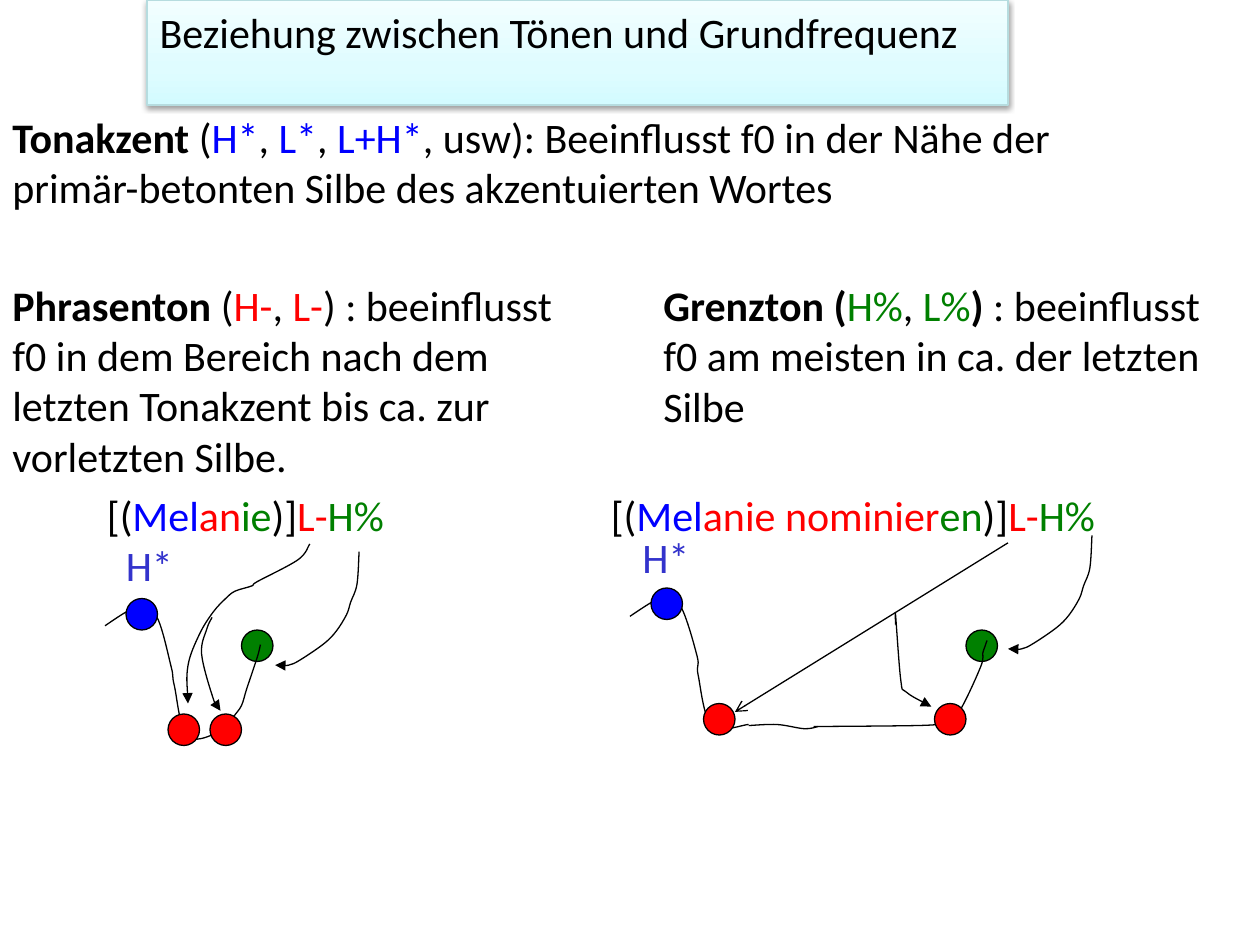
from copy import deepcopy
from lxml.etree import SubElement as Sub
from pptx import Presentation
from pptx.dml.color import RGBColor as RGB
from pptx.enum.shapes import MSO_CONNECTOR as CON, MSO_SHAPE as SHAPE
from pptx.enum.text import MSO_ANCHOR as ANCHOR, MSO_AUTO_SIZE as AUTO, PP_ALIGN as ALIGN
from pptx.oxml.ns import qn
from pptx.util import Inches, Pt

BLACK = RGB(0, 0, 0)
BLUE = RGB(0, 0, 255)
RED = RGB(255, 0, 0)
GREEN = RGB(0, 128, 0)
INDIGO = RGB(0x33, 0x33, 0xCC)
EDGE = RGB(0xB6, 0xDC, 0xDF)
SHADES = [(0, RGB(0xD3, 0xFB, 0xFF)), (0.35, RGB(0xDF, 0xFC, 0xFF)), (1, RGB(0xF2, 0xFE, 0xFF))]
WIDE, HIGH = Inches(10), Inches(7.5)
UNIT = WIDE // 120
DOT = 3
DROP = [(0, 0), (-0.2, 3.1), (-0.8, 4.8), (-1.2, 6), (-2.2, 7.6),
        (-3.4, 8.8), (-5.6, 10.3), (-6.7, 10.8), (-8, 10.8)]


def grid(*vals):
    """Turn columns and rows into lengths."""
    return [round(v * UNIT) for v in vals]


def shift(box, pts):
    """Move points by the corner of a box."""
    return [(box[0] + x, box[1] + y) for x, y in pts]


def write(frame, runs):
    """Fill a text frame with (text, colour, bold) runs."""
    frame.auto_size = AUTO.SHAPE_TO_FIT_TEXT
    para = frame.paragraphs[0]
    para.alignment = ALIGN.LEFT
    for text, tint, *bold in runs:
        run = para.add_run()
        run.text = text
        font = run.font
        font.name, font.size, font.bold = "Calibri", Pt(24), bool(bold)
        font.color.rgb = tint


def label(slide, box, runs, wrap=True):
    """Place a text box."""
    frame = slide.shapes.add_textbox(*grid(*box)).text_frame
    frame.word_wrap = wrap
    write(frame, runs)


def dot(slide, spot, tint):
    """Draw a tone target."""
    oval = slide.shapes.add_shape(SHAPE.OVAL, *grid(*spot, DOT, DOT))
    oval.shadow.inherit = False
    oval.fill.solid()
    oval.fill.fore_color.rgb = tint
    oval.line.color.rgb, oval.line.width = BLACK, Pt(0.75)


def stroke(line, tip=None):
    """Style a line and its arrowhead."""
    line.color.rgb, line.width = BLACK, Pt(0.75)
    if tip:
        Sub(line._get_or_add_ln(), qn("a:tailEnd"), type=tip)


def bend(form):
    """Turn the straight segments of a freeform into smooth cubic ones."""
    props = form._element.spPr
    marks = list(props.iter(qn("a:pt")))
    pts = [(int(m.get("x")), int(m.get("y"))) for m in marks]
    ends = [pts[0], *pts, pts[-1]]
    segs = list(props.iter(qn("a:lnTo")))
    for seg, a, b, c, d in zip(segs, ends, ends[1:], ends[2:], ends[3:]):
        seg.tag = qn("a:cubicBezTo")
        for i, (near, back, fore) in enumerate([(b, a, c), (c, d, b)]):
            pull = deepcopy(seg[-1])
            for key, n, p, f in zip("xy", near, back, fore):
                pull.set(key, str(round(n + (f - p) / 6)))
            seg.insert(i, pull)


def curve(slide, pts, tip=None):
    """Draw an open curve."""
    knots = [tuple(grid(*p)) for p in pts]
    pen = slide.shapes.build_freeform(*knots[0])
    pen.add_line_segments(knots[1:], close=False)
    form = pen.convert_to_shape()
    bend(form)
    form.shadow.inherit = False
    form.fill.background()
    stroke(form.line, tip)


def arrow(slide, start, end):
    """Draw a straight arrow."""
    link = slide.shapes.add_connector(CON.STRAIGHT, *grid(*start, *end))
    Sub(link._element.spPr, qn("a:effectLst"))
    stroke(link.line, "arrow")


def title(slide, box, text):
    """Format the title as a shaded bar."""
    bar = slide.shapes.title
    bar.left, bar.top, bar.width, bar.height = grid(*box)
    bar.fill.gradient()
    bar.fill.gradient_angle = 90
    props = bar._element.spPr
    stops = props.find(".//" + qn("a:gsLst"))
    stops.insert(1, deepcopy(stops[0]))
    for stop, (pos, tint) in zip(bar.fill.gradient_stops, SHADES):
        stop.position, stop.color.rgb = pos, tint
    bar.line.color.rgb, bar.line.width = EDGE, Pt(0.75)
    glow = Sub(Sub(props, qn("a:effectLst")), qn("a:outerShdw"), blurRad=str(Pt(3.1)),
               dist=str(Pt(1.6)), dir="5400000", rotWithShape="0")
    Sub(Sub(glow, qn("a:srgbClr"), val="000000"), qn("a:alpha"), val="38000")
    frame = bar.text_frame
    frame.word_wrap = True
    frame.vertical_anchor = ANCHOR.TOP
    write(frame, [(text, BLACK)])


def tune(slide, box, word, high, peak, lows, last, fall, pitch, curves, ray=None):
    """Draw a phrase with its pitch contour and tone arrows."""
    start, mid, end = word
    label(slide, box, [("[(", BLACK), (start, BLUE), (mid, RED), (end, GREEN),
                       (")]", BLACK), ("L-", RED), ("H%", GREEN)], False)
    dot(slide, *shift(box, [last]), GREEN)
    curve(slide, shift(shift(box, [fall])[0], DROP), "triangle")
    for pts in pitch:
        curve(slide, shift(box, pts))
    dot(slide, *shift(box, [peak]), BLUE)
    label(slide, (*shift(box, [high])[0], 7, 6.1), [("H*", INDIGO)], False)
    for spot in shift(box, lows):
        dot(slide, spot, RED)
    for pts in curves:
        curve(slide, shift(box, pts), "triangle")
    if ray:
        arrow(slide, *shift(box, ray))


def main():
    """Build the slide."""
    deck = Presentation()
    deck.slide_width, deck.slide_height = WIDE, HIGH
    slide = deck.slides.add_slide(deck.slide_layouts[5])
    title(slide, (14, 0, 82, 6.06), "Beziehung zwischen Tönen und Grundfrequenz")
    label(slide, (0, 10, 103, 10.9), [
        ("Tonakzent ", BLACK, True), ("(", BLACK), ("H*", BLUE), (", ", BLACK), ("L*", BLUE),
        (", ", BLACK), ("L+H*", BLUE),
        (", usw): Beeinflusst f0 in der Nähe der primär-betonten Silbe des akzentuierten Wortes", BLACK)])
    label(slide, (62, 26, 55, 15.7), [
        ("Grenzton (", BLACK, True), ("H%", GREEN), (", ", BLACK), ("L%", GREEN), (")", BLACK, True),
        (" : beeinflusst f0 am meisten in ca. der letzten Silbe", BLACK)])
    label(slide, (0, 26, 54, 20.6), [
        ("Phrasenton ", BLACK, True), ("(", BLACK), ("H-", RED), (", ", BLACK), ("L-", RED),
        (") : beeinflusst f0 in dem Bereich nach dem letzten Tonakzent bis ca. zur vorletzten Silbe.", BLACK)])
    tune(slide, (9, 46, 29.6, 6.1), ("Mel", "an", "ie"), high=(1.8, 4.75), peak=(3, 11),
         lows=[(7, 22), (11, 22)], last=(14, 14), fall=(25.2, 6.55),
         pitch=[[(1, 13.6), (3, 12.3), (4, 12), (5.9, 12.7), (7.3, 17.5), (7.6, 19.3), (8.9, 24.2),
                 (12.4, 23.5), (12.7, 23), (13.2, 22.6), (13.3, 22.2), (14, 21.2), (14.5, 19.6),
                 (15.5, 16.6), (15.8, 15.4)]],
         curves=[[(20.5, 5.8), (19.4, 7.3), (15.5, 9.4), (15, 9.8), (13.4, 10.3), (12.5, 11),
                  (11.3, 12.3), (10, 14.4), (8.9, 17.4), (8.9, 21)],
                 [(11.2, 12.8), (10.7, 13.9), (10.2, 16.3), (11.3, 20.5), (12, 21.7)]])
    tune(slide, (57, 46, 49.4, 6.1), ("Mel", "anie nominier", "en"), high=(3, 4), peak=(5, 10),
         lows=[(10, 21), (32, 21)], last=(35, 14), fall=(47, 5),
         pitch=[[(3, 12.7), (5, 11.4), (6, 11), (7.8, 11.7), (9.4, 16.5), (9.5, 18.3),
                 (10.8, 23.1), (14.3, 23)],
                [(14.3, 23.1), (17, 23), (19.6, 23.4), (20.9, 23.2)],
                [(20.5, 23.2), (30.5, 23.1), (33.2, 22.9)],
                [(33, 22.9), (34.4, 21.7), (36.4, 17.5), (36.6, 16.2), (36.8, 15.6), (37, 15)]],
         curves=[[(28.3, 13.5), (28.3, 12.6), (28.8, 18.8), (29.3, 19.9), (31.7, 21.3)]],
         ray=[(39, 5.7), (13, 21.8)])
    deck.save("out.pptx")


if __name__ == "__main__":
    main()
